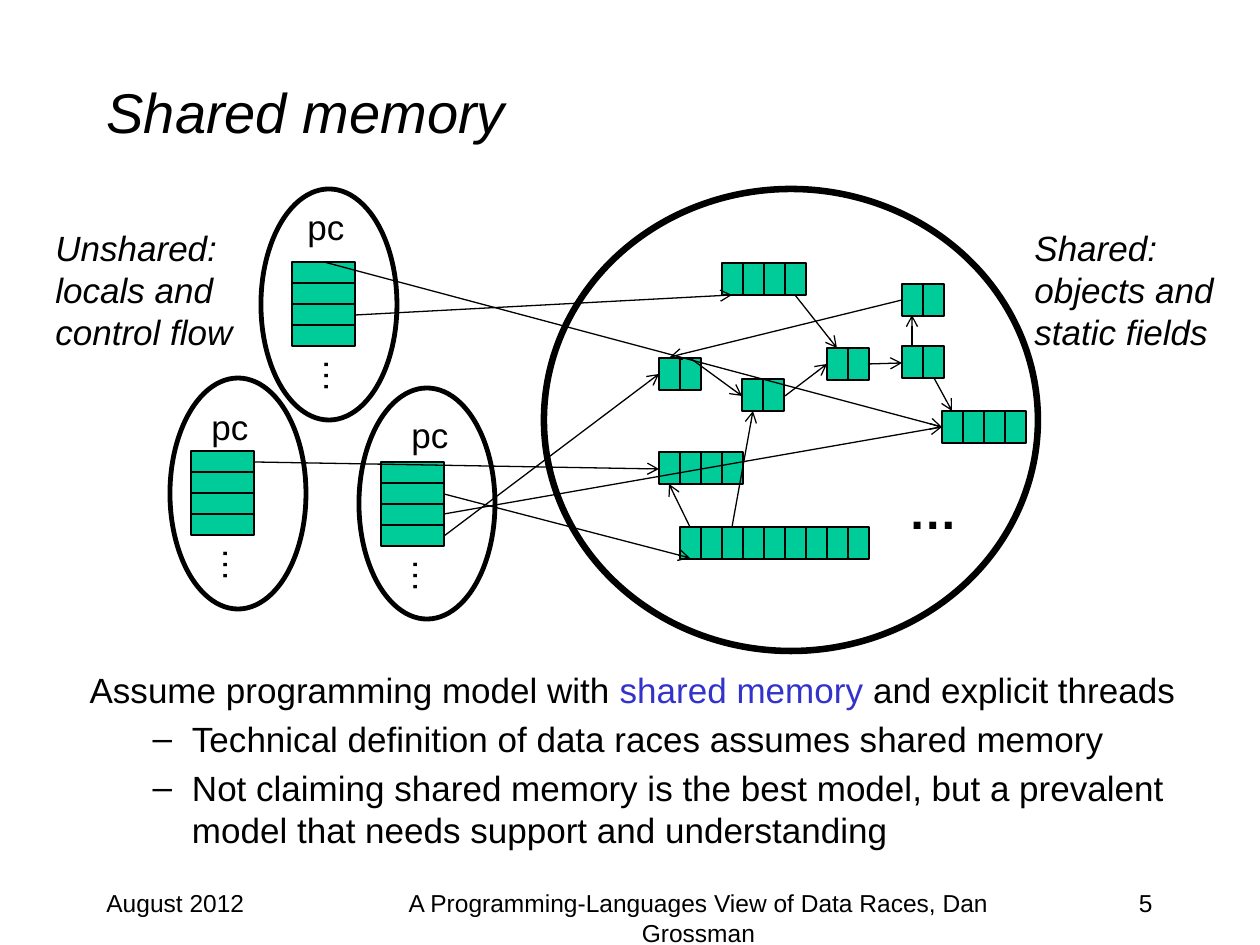
from lxml import etree
from pptx import Presentation
from pptx.dml.color import RGBColor
from pptx.enum.shapes import MSO_CONNECTOR, MSO_SHAPE
from pptx.enum.text import MSO_ANCHOR, MSO_AUTO_SIZE, PP_ALIGN
from pptx.oxml.ns import qn
from pptx.util import Inches, Pt

PX_PER_INCH = 126
BLACK = RGBColor(0x00, 0x00, 0x00)
GREEN = RGBColor(0x00, 0xCC, 0x99)
BLUE = RGBColor(0x33, 0x33, 0xCC)
OVAL, RECT = MSO_SHAPE.OVAL, MSO_SHAPE.RECTANGLE
STRAIGHT = MSO_CONNECTOR.STRAIGHT
LEFT, CENTER, RIGHT = PP_ALIGN.LEFT, PP_ALIGN.CENTER, PP_ALIGN.RIGHT
MIDDLE, NO_FIT = MSO_ANCHOR.MIDDLE, MSO_AUTO_SIZE.NONE

# (x, y, number of fields)
HEAP_OBJECTS = [
    (659, 358, 2), (659, 452, 4), (742, 379, 2), (827, 348, 2), (722, 263, 4),
    (942, 411, 4), (680, 527, 9), (902, 346, 2), (902, 284, 2),
]
# oval, stack and "pc" label positions
THREADS = [
    ((261, 189), (292, 262), (295, 199)),
    ((170, 378), (191, 451), (199, 399)),
    ((359, 388), (381, 462), (399, 407)),
]
HEAP_POINTERS = [
    (795, 295, 837, 348), (690, 358, 742, 396), (785, 396, 827, 364),
    (690, 527, 669, 484), (732, 527, 753, 411), (868, 364, 902, 363),
    (912, 346, 912, 315), (902, 300, 670, 357), (934, 378, 952, 411),
]
STACK_POINTERS = [
    (324, 262, 942, 427), (355, 315, 732, 295), (255, 462, 659, 469),
    (444, 494, 690, 558), (444, 536, 659, 374), (444, 514, 942, 427),
]
FOOTERS = [
    ("August 2012", 94, 262, LEFT),
    ("5", 903, 262, RIGHT),
    ("A Programming-Languages View of Data Races, Dan Grossman", 347, 703, CENTER),
]
BODY = [
    (0, [("Assume programming model with ", BLACK), ("shared memory", BLUE),
         (" and explicit threads", BLACK)]),
    (1, [("Technical definition of data races assumes shared memory", BLACK)]),
    (1, [("Not claiming shared memory is the best model, but a prevalent "
          "model that needs support and understanding", BLACK)]),
]


def px(n):
    return round(n * Inches(1) / PX_PER_INCH)


class Deck:
    font = "Arial"

    def __init__(self, slide):
        self.s = slide

    def run(self, p, text, size=20, color=BLACK, bold=False, italic=False):
        r = p.add_run()
        r.text = text
        f = r.font
        f.name, f.size, f.bold, f.italic = self.font, Pt(size), bold, italic
        f.color.rgb = color

    def place(self, sp, x, y, w, h):
        sp.left, sp.top, sp.width, sp.height = px(x), px(y), px(w), px(h)

    def title(self, text, *box):
        sp = self.s.shapes.title
        self.place(sp, *box)
        tf = sp.text_frame
        tf.vertical_anchor = MIDDLE
        tf.paragraphs[0].alignment = LEFT
        self.run(tf.paragraphs[0], text, 32, italic=True)

    def body(self, items, *box):
        """Level 0 is plain text; level 1 keeps the template's dash and indent."""
        sp = self.s.placeholders[1]
        self.place(sp, *box)
        tf = sp.text_frame
        tf.auto_size = NO_FIT
        for i, (level, runs) in enumerate(items):
            p = tf.add_paragraph() if i else tf.paragraphs[0]
            p.level = level
            for text, color in runs:
                self.run(p, text, color=color)
            if level == 0:
                pPr = p._p.get_or_add_pPr()
                pPr.set("marL", "0")
                pPr.set("indent", "0")
                etree.SubElement(pPr, qn("a:buNone"))

    def text(self, lines, x, y, w, h, align=LEFT, wrap=False, rotation=0, **style):
        sp = self.s.shapes.add_textbox(px(x), px(y), px(w), px(h))
        sp.rotation = rotation
        tf = sp.text_frame
        tf.word_wrap = wrap
        for i, line in enumerate(lines):
            p = tf.add_paragraph() if i else tf.paragraphs[0]
            p.alignment = align
            self.run(p, line, **style)

    def shape(self, kind, x, y, w, h, line=0.75, fill=None):
        sp = self.s.shapes.add_shape(kind, px(x), px(y), px(w), px(h))
        sp.shadow.inherit = False
        if fill is None:
            sp.fill.background()
        else:
            sp.fill.solid()
            sp.fill.fore_color.rgb = fill
        sp.line.color.rgb = BLACK
        sp.line.width = Pt(line)

    def cells(self, x, y, w, h, count, dx=0, dy=0):
        for i in range(count):
            self.shape(RECT, x + i * dx, y + i * dy, w, h, fill=GREEN)

    def thread(self, oval, stack, label):
        self.shape(OVAL, *oval, 136, 231, line=2.75)
        self.cells(*stack, 63, 21, 4, dy=21)
        x, y = stack
        self.text(["…"], x + 16, y + 87, 60, 55, rotation=90)
        self.text(["pc"], *label, 63, 55)

    def arrow(self, x1, y1, x2, y2):
        c = self.s.shapes.add_connector(STRAIGHT, px(x1), px(y1), px(x2), px(y2))
        c.line.color.rgb = BLACK
        c.line.width = Pt(0.75)
        etree.SubElement(c.line._get_or_add_ln(), qn("a:tailEnd"), type="arrow")
        etree.SubElement(c._element.spPr, qn("a:effectLst"))


def main():
    prs = Presentation()
    prs.slide_width, prs.slide_height = Inches(10), Inches(7.5)
    deck = Deck(prs.slides.add_slide(prs.slide_layouts[1]))

    deck.title("Shared memory", 94, 32, 1071, 158)
    deck.body(BODY, 77, 662, 1113, 210)
    for text, x, w, align in FOOTERS:
        deck.text([text], x, 882, w, 63, align, wrap=True, size=14)

    deck.shape(OVAL, 544, 189, 494, 462, line=3.75)
    for x, y, count in HEAP_OBJECTS:
        deck.cells(x, y, 21, 32, count, dx=21)
    deck.text(["…"], 896, 474, 74, 72, size=28, bold=True)
    for thread in THREADS:
        deck.thread(*thread)
    for pointer in HEAP_POINTERS + STACK_POINTERS:
        deck.arrow(*pointer)

    deck.text(["Unshared:", "locals and", "control flow"],
              43, 220, 204, 140, italic=True)
    deck.text(["Shared:", "objects and", "static fields"],
              1022, 220, 207, 140, italic=True)
    prs.save("out.pptx")


if __name__ == "__main__":
    main()
